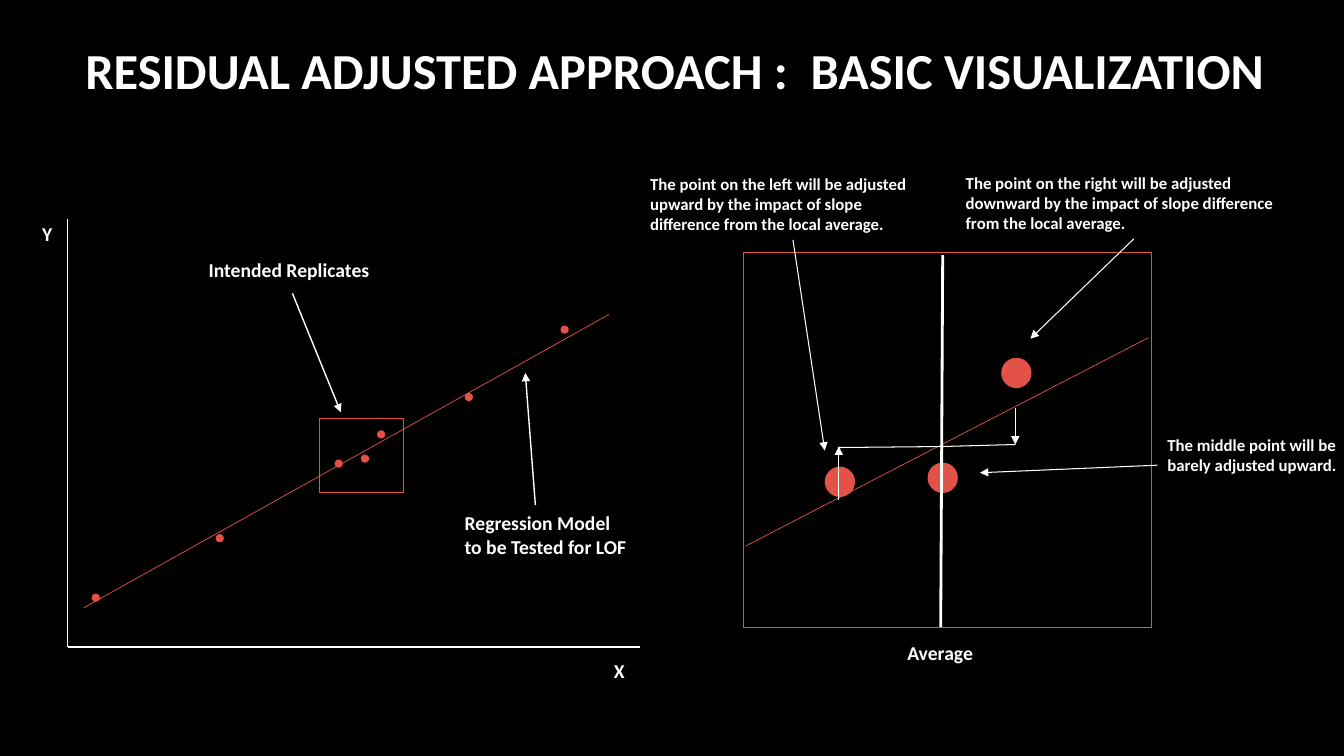
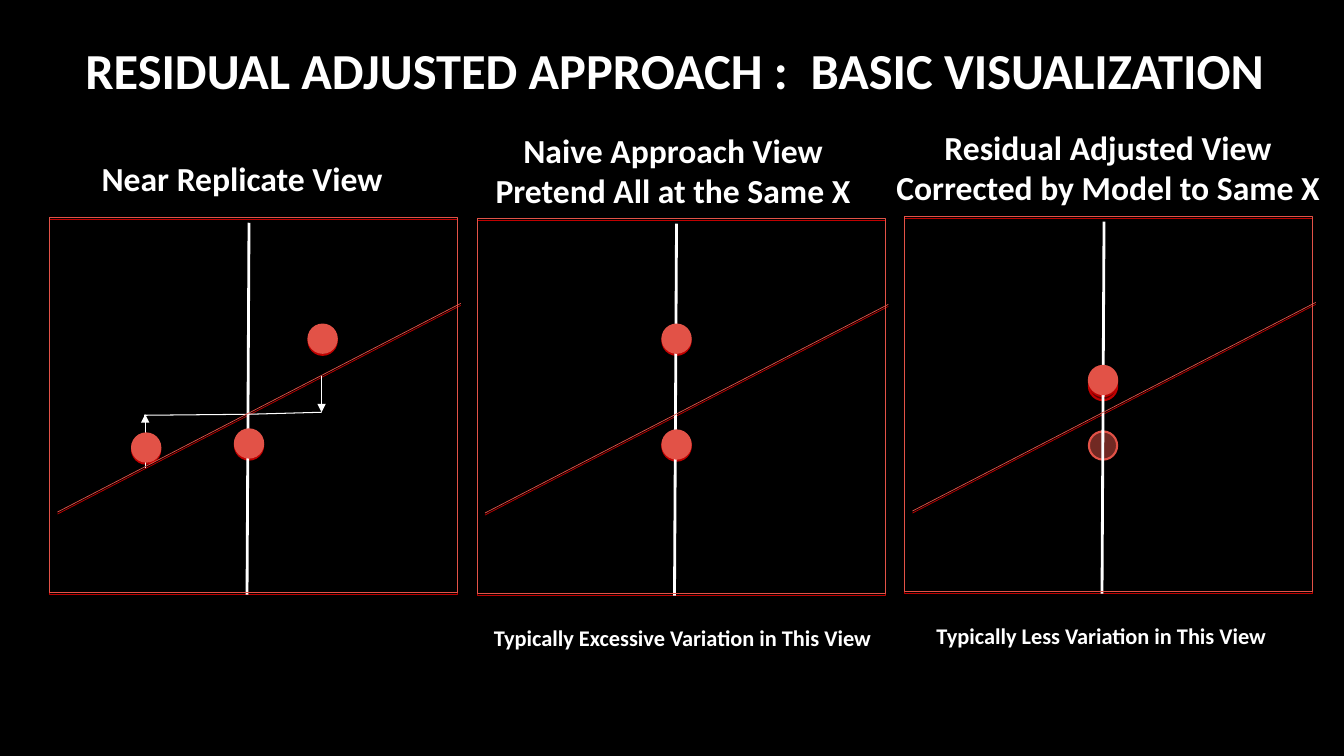
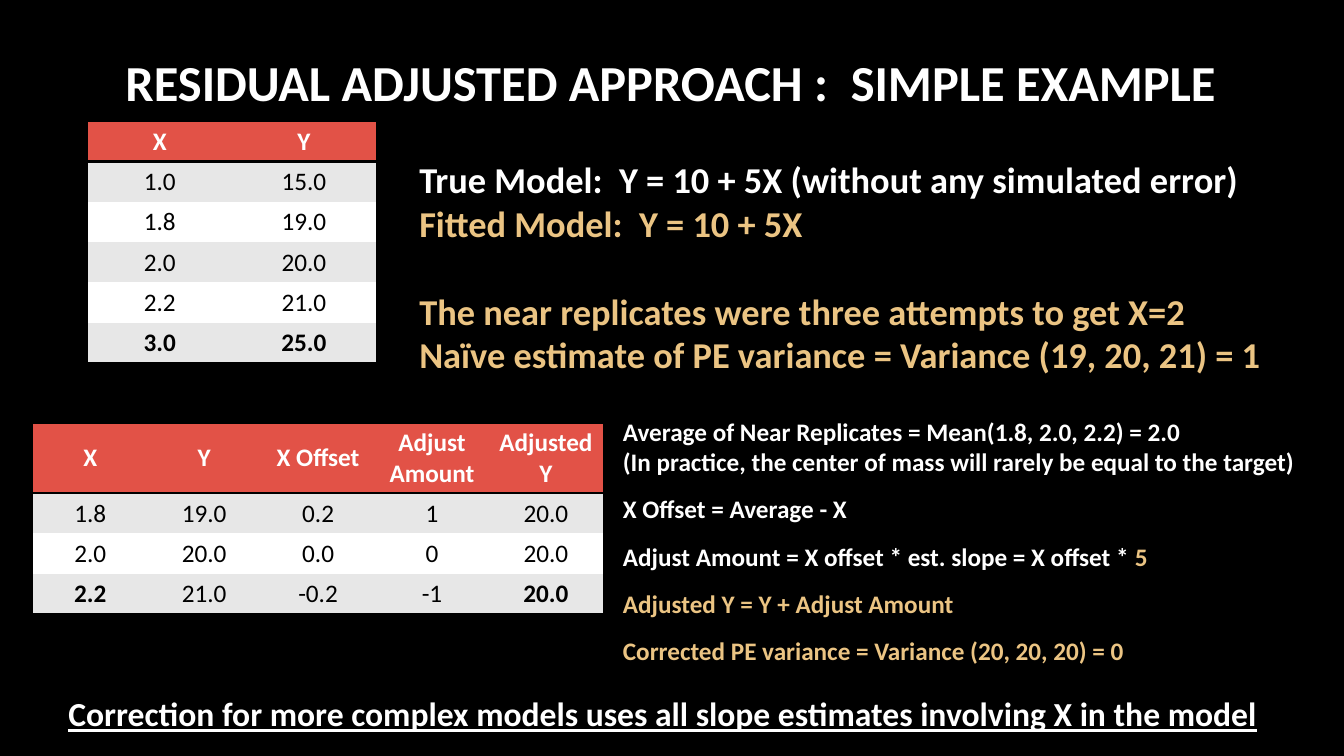
from pptx import Presentation
from pptx import util as u
from pptx.dml.color import RGBColor
from pptx.enum import shapes, text
from pptx.oxml.ns import qn
from lxml import etree

FONT = "Calibri"
BLACK, WHITE, RED, DARK_RED = "000000", "FFFFFF", "E25247", "C00000"
GOLD, GREY = "EBC483", "E7E7E7"
PANEL_WIDTH, PANEL_HEIGHT = 4.05, 3.72
NO_GRID_STYLE = "{2D5ABB26-0587-4C30-8999-92F81FD0307C}"
CENTER = text.PP_ALIGN.CENTER


def rgb(colour):
    return RGBColor.from_string(colour)


def inches(*lengths):
    return [u.Inches(length) for length in lengths]


def format_span(span, size, colour=WHITE, bold=True):
    span.font.name = FONT
    span.font.size = u.Pt(size)
    span.font.bold = bold
    span.font.color.rgb = rgb(colour)


def write(frame, content, size, align=None, colour=WHITE, bold=True):
    frame.text = content
    for para in frame.paragraphs:
        para.alignment = align
        for span in para.runs:
            format_span(span, size, colour, bold)


def add_text(page, left, top, width, height, content, size, align=None):
    box = page.shapes.add_textbox(*inches(left, top, width, height))
    box.text_frame.word_wrap = True
    write(box.text_frame, content, size, align)
    return box


def add_line(page, start, end, colour=WHITE, weight=0.75, arrow=False):
    line = page.shapes.add_connector(
        shapes.MSO_CONNECTOR.STRAIGHT, *inches(*start, *end))
    line.line.color.rgb = rgb(colour)
    line.line.width = u.Pt(weight)
    properties = line.element.spPr
    if arrow:
        etree.SubElement(properties.find(qn("a:ln")), qn("a:tailEnd"), type="triangle")
    etree.SubElement(properties, qn("a:effectLst"))
    return line


def add_dot(page, left, top, size, colour=RED, faded=False):
    dot = page.shapes.add_shape(
        shapes.MSO_SHAPE.OVAL, *inches(left, top, size, size))
    dot.shadow.inherit = False
    dot.fill.solid()
    dot.fill.fore_color.rgb = rgb(colour)
    dot.line.color.rgb = rgb(colour)
    dot.line.width = u.Pt(1.5)
    if faded:
        tint = dot.element.spPr.find(qn("a:solidFill")).find(qn("a:srgbClr"))
        etree.SubElement(tint, qn("a:alpha"), val="50000")


def add_frame(page, left, top, width, height, colour=RED):
    frame = page.shapes.add_shape(
        shapes.MSO_SHAPE.RECTANGLE, *inches(left, top, width, height))
    frame.shadow.inherit = False
    frame.fill.background()
    frame.line.color.rgb = rgb(colour)
    frame.line.width = u.Pt(0.5)


def new_page(deck, title, left=0.37, top=0.34):
    page = deck.slides.add_slide(deck.slide_layouts.get_by_name("Title Only"))
    heading = page.shapes.title
    heading.left, heading.top, heading.width, heading.height = inches(
        left, top, 12.65, 0.71)
    frame = heading.text_frame
    frame.auto_size = text.MSO_AUTO_SIZE.NONE
    frame.vertical_anchor = text.MSO_ANCHOR.TOP
    write(frame, title, 36, CENTER)
    return page


def scatter_plot(page, left, top):
    """Axes, points, fitted line and labels, measured from the top of the Y axis."""
    def at(x, y):
        return left + x, top + y

    origin = at(0, 4.25)
    add_line(page, at(0, 0), origin, weight=1)
    add_line(page, at(5.68, 4.25), origin, weight=1)
    for point in ((0.25, 3.73), (4.9, 1.07), (3.95, 1.74), (1.48, 3.14),
                  (2.66, 2.4), (2.92, 2.35), (3.08, 2.11)):
        add_dot(page, *at(*point), 0.06)
    add_line(page, at(5.37, 0.95), at(0.16, 3.86), RED, 0.5)
    add_frame(page, *at(2.5, 1.98), 0.83, 0.74)
    add_line(page, at(2.23, 0.74), at(2.71, 1.92), weight=1, arrow=True)
    add_line(page, at(4.64, 2.84), at(4.54, 1.53), weight=1, arrow=True)
    for x, y, width, height, label in (
            (3.84, 2.85, 1.85, 0.57, "Regression Model to be Tested for LOF"),
            (1.3, 0.34, 1.85, 0.34, "Intended Replicates"),
            (5.32, 4.32, 0.37, 0.37, "X"),
            (-0.35, -0.02, 0.37, 0.37, "Y")):
        add_text(page, *at(x, y), width, height, label, 14)


def panel_layer(page, left, top, dots, shift=0.06, colour=RED, faded=False):
    """Dots, fitted line and frame of one close-up panel."""
    for x, y in dots:
        add_dot(page, left + x, top + y, 0.28, colour, faded)
    add_line(page, (left + shift + 4.02, top + 0.85),
             (left + shift + 0.02, top + 2.92), colour, 0.5)
    add_frame(page, left, top, PANEL_WIDTH, PANEL_HEIGHT, colour)


def average_line(page, left, top):
    add_line(page, (left + 1.96, top + 3.72), (left + 1.98, top + 0.03), weight=2)


def adjustment_arrows(page, left, top):
    """Arrows from the fitted line to the level of the local average."""
    def at(x, y):
        return left + x, top + y

    add_line(page, at(1.97, 1.93), at(2.7, 1.91))
    add_line(page, at(0.95, 2.46), at(0.95, 1.93), arrow=True)
    add_line(page, at(0.94, 1.94), at(1.97, 1.93))
    add_line(page, at(2.7, 1.55), at(2.7, 1.91), arrow=True)


NEAR_DOTS = [(0.82, 2.14), (1.84, 2.1), (2.57, 1.06)]


def annotated_panel(page, left, top):
    panel_layer(page, left, top, NEAR_DOTS, shift=0)
    add_text(page, left + 1.53, top + 3.81, 1.08, 0.34, "Average", 14)
    average_line(page, left, top)
    adjustment_arrows(page, left, top)
    notes = (
        (2.11, -0.84, 3.53, 2, (2.85, 0.86),
         "The point on the right will be adjusted downward by the impact "
         "of slope difference from the local average."),
        (-1.02, -0.83, 3.03, 2, (0.81, 1.97),
         "The point on the left will be adjusted upward by the impact "
         "of slope difference from the local average."),
        (4.11, 1.76, 1.88, 1, (2.35, 2.19),
         "The middle point will be barely adjusted upward."),
    )
    for x, y, width, side, target, content in notes:
        note = add_text(page, left + x, top + y, width, 0.71, content, 12)
        end = left + target[0], top + target[1]
        add_line(page, end, end, arrow=True).begin_connect(note, side)


def layered_panel(page, left, top, dots, shadows, ghosts=(), arrows=False):
    """Close-up panel with a dark, see-through layer behind it."""
    panel_layer(page, left, top + 0.02, shadows, colour=DARK_RED, faded=True)
    for x, y in ghosts:
        add_dot(page, left + x, top + y, 0.28, faded=True)
    average_line(page, left, top + 0.02)
    if arrows:
        adjustment_arrows(page, left, top + 0.02)
    panel_layer(page, left, top, dots)


def add_grid(page, left, top, column_width, rows, bold_cells, header_height=0.4):
    """Table with a red header, banded rows and black rules."""
    heights = [header_height] + [0.4] * (len(rows) - 1)
    holder = page.shapes.add_table(
        len(rows), len(rows[0]),
        *inches(left, top, column_width * len(rows[0]), sum(heights)))
    holder.element.find(".//" + qn("a:tableStyleId")).text = NO_GRID_STYLE
    table = holder.table
    for column in table.columns:
        column.width = u.Inches(column_width)
    for r, values in enumerate(rows):
        table.rows[r].height = u.Inches(heights[r])
        fill = RED if r == 0 else GREY if r % 2 else WHITE
        for c, value in enumerate(values):
            cell = table.cell(r, c)
            cell.fill.solid()
            cell.fill.fore_color.rgb = rgb(fill)
            cell.vertical_anchor = text.MSO_ANCHOR.MIDDLE
            write(cell.text_frame, value, 18, CENTER, BLACK if r else WHITE,
                  r == 0 or (r, c) in bold_cells)
    for r, row in enumerate(holder.element.iter(qn("a:tr"))):
        edges = {0: ("a:lnT", "a:lnB"), len(rows) - 1: ("a:lnB",)}.get(r, ())
        for properties in row.iter(qn("a:tcPr")):
            for place, edge in enumerate(edges):
                rule = etree.Element(qn(edge), w=str(u.Pt(2)))
                fill = etree.SubElement(rule, qn("a:solidFill"))
                etree.SubElement(fill, qn("a:srgbClr"), val=BLACK)
                properties.insert(place, rule)


def model_text(page, left, top):
    box = add_text(page, left, top, 9.15, 2.29, "\n".join((
        "True Model:  Y = 10 + 5X (without any simulated error)",
        "Fitted Model:  Y = 10 + 5X",
        "The near replicates were three attempts to get X=2",
        "Naïve estimate of PE variance = Variance (19, 20, 21) = 1")), 26)
    paras = box.text_frame.paragraphs
    paras[2].space_before = u.Pt(31.7)
    for para in paras[1:]:
        para.runs[0].font.color.rgb = rgb(GOLD)


def correction_text(page, left, top):
    box = add_text(page, left, top, 7.04, 2.59, "\n".join((
        "Average of Near Replicates = Mean(1.8, 2.0, 2.2) = 2.0",
        "(In practice, the center of mass will rarely be equal to the target)",
        "X Offset = Average - X",
        "Adjust Amount = X offset * est. slope = X offset * ",
        "Adjusted Y = Y + Adjust Amount",
        "Corrected PE variance = Variance (20, 20, 20) = 0")), 18)
    paras = box.text_frame.paragraphs
    for para in paras[2:]:
        para.space_before = u.Pt(12.2)
    slope = paras[3].add_run()
    slope.text = "5"
    format_span(slope, 18, GOLD)
    for para in paras[4:]:
        para.runs[0].font.color.rgb = rgb(GOLD)


def overview_page(deck):
    page = new_page(deck, "RESIDUAL ADJUSTED APPROACH :  BASIC VISUALIZATION")
    scatter_plot(page, 0.67, 2.17)
    annotated_panel(page, 7.37, 2.5)


def comparison_page(deck):
    page = new_page(deck, "RESIDUAL ADJUSTED APPROACH :  BASIC VISUALIZATION")
    near, naive, adjusted = [0.49 + 4.24 * column for column in range(3)]
    layered_panel(page, near, 2.16, NEAR_DOTS, NEAR_DOTS, arrows=True)
    layered_panel(page, naive, 2.17, [(1.84, 2.1), (1.84, 1.05)],
                  [(1.84, 2.09), (1.84, 2.1), (1.84, 1.05)])
    layered_panel(page, adjusted, 2.15, [(1.83, 1.48)],
                  [(1.83, 1.52), (1.83, 1.48)], ghosts=[(1.83, 2.13)])
    add_text(page, 0.91, 1.52, 3.1, 0.5, "Near Replicate View", 24)
    add_text(page, 4.8, 1.24, 3.75, 0.91,
             "Naive Approach View\nPretend All at the Same X", 24, CENTER)
    add_text(page, 8.73, 1.21, 4.52, 0.91,
             "Residual Adjusted View\nCorrected by Model to Same X", 24, CENTER)
    add_text(page, 4.8, 6.14, 3.96, 0.37,
             "Typically Excessive Variation in This View", 16)
    add_text(page, 9.19, 6.12, 3.6, 0.37,
             "Typically Less Variation in This View", 16)


def example_page(deck):
    page = new_page(deck, "RESIDUAL ADJUSTED APPROACH :  SIMPLE EXAMPLE", 0.33, 0.46)
    model_text(page, 4.06, 1.51)
    correction_text(page, 6.08, 4.08)
    closing = add_text(
        page, 0.58, 6.83, 12.15, 0.5,
        "Correction for more complex models uses all slope estimates "
        "involving X in the model", 24)
    closing.text_frame.paragraphs[0].runs[0].font.underline = True
    add_grid(page, 0.87, 1.2, 1.43, [
        ("X", "Y"), ("1.0", "15.0"), ("1.8", "19.0"), ("2.0", "20.0"),
        ("2.2", "21.0"), ("3.0", "25.0")], {(5, 0), (5, 1)})
    add_grid(page, 0.33, 4.19, 1.13, [
        ("X", "Y", "X Offset", "Adjust Amount", "Adjusted Y"),
        ("1.8", "19.0", "0.2", "1", "20.0"),
        ("2.0", "20.0", "0.0", "0", "20.0"),
        ("2.2", "21.0", "-0.2", "-1", "20.0")], {(3, 0), (3, 4)}, 0.7)


def main():
    deck = Presentation()
    deck.slide_width, deck.slide_height = inches(13.33, 7.5)
    background = deck.slide_master.background.fill
    background.solid()
    background.fore_color.rgb = rgb(BLACK)
    overview_page(deck)
    comparison_page(deck)
    example_page(deck)
    deck.save("out.pptx")


if __name__ == "__main__":
    main()
